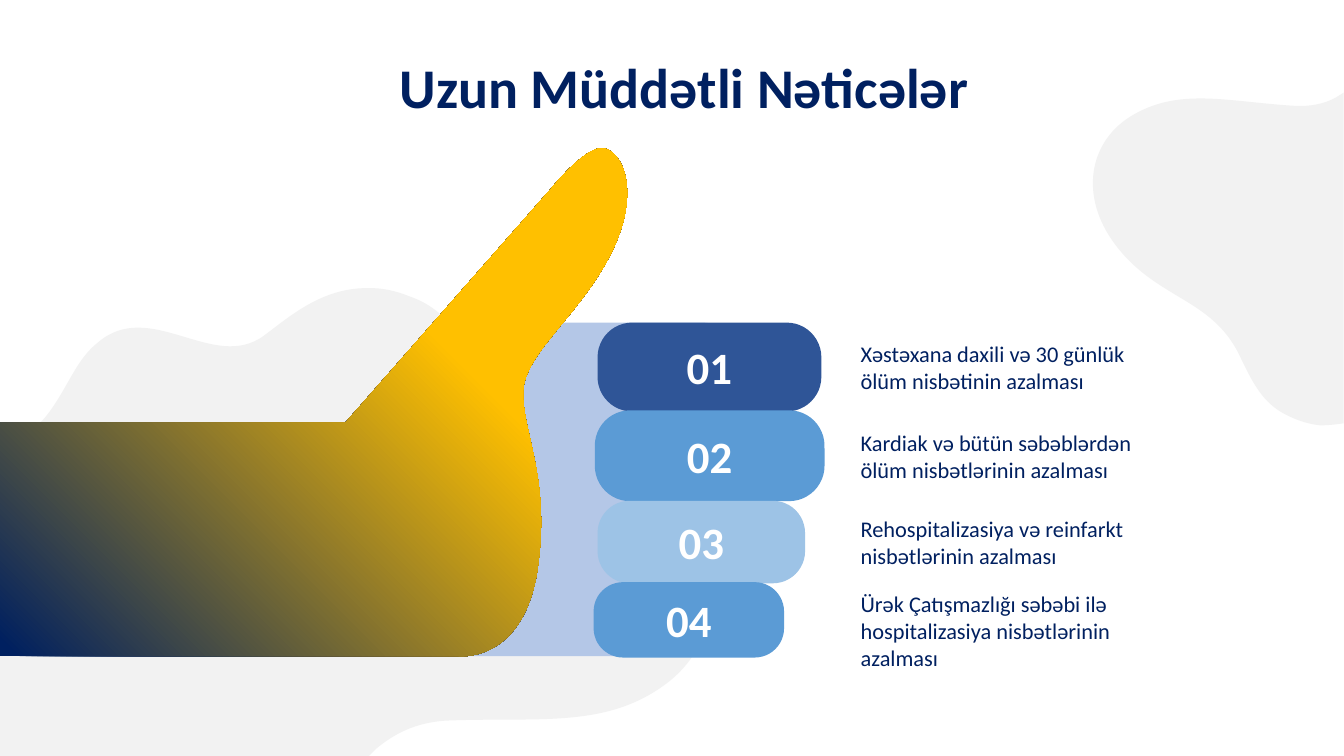
from lxml.etree import SubElement
from pptx import Presentation
from pptx.dml.color import RGBColor
from pptx.enum.shapes import MSO_SHAPE
from pptx.enum.text import MSO_ANCHOR, MSO_AUTO_SIZE, PP_ALIGN
from pptx.oxml.ns import qn
from pptx.util import Cm, Pt

THEME = {
    "navy": "002060", "gold": "FFC000", "white": "FFFFFF", "mist": "F2F2F2",
    "palm": "B4C7E7", "deep": "2F5597", "blue": "5B9BD5", "sky": "9DC3E6",
    "title": {"name": "Calibri", "size": Pt(40), "bold": True},
    "number": {"name": "Calibri", "size": Pt(32), "bold": True},
    "label": {"name": "Calibri", "size": Pt(16), "bold": False},
}
UNIT = Cm(2.54) / 100


def write(shape, text, role, tint, align, inset):
    frame = shape.text_frame
    box = {"word_wrap": True, "vertical_anchor": MSO_ANCHOR.MIDDLE,
           "margin_left": inset, "margin_right": inset,
           "margin_top": 0, "margin_bottom": 0}
    for key, value in box.items():
        setattr(frame, key, value)
    para = frame.paragraphs[0]
    para.alignment = align
    run = para.add_run()
    run.text = text
    for key, value in THEME[role].items():
        setattr(run.font, key, value)
    run.font.color.rgb = RGBColor.from_string(THEME[tint])
    return para


def outline(shapes, box, parts):
    x, y, w, h = box
    pen = shapes.build_freeform(x, y, scale=UNIT)
    pen.add_line_segments([(x + w, y), (x + w, y + h), (x, y + h)])
    form = pen.convert_to_shape()
    track = next(form.element.iter(qn("a:path")))
    for child in list(track):
        track.remove(child)
    for spot, part in enumerate(parts):
        kind = "cubicBezTo" if len(part) == 6 else "lnTo" if spot else "moveTo"
        move = SubElement(track, qn(f"a:{kind}"))
        for px, py in zip(part[::2], part[1::2]):
            SubElement(move, qn("a:pt"), x=str(px - x), y=str(py - y))
    SubElement(track, qn("a:close"))
    return form


deck = Presentation()
deck.slide_width = Cm(33.87)
deck.slide_height = Cm(19.05)
slide = deck.slides.add_slide(deck.slide_layouts[5])
shapes = slide.shapes

title = shapes.title
for key, value in {"left": Cm(2.63), "top": Cm(0.82),
                   "width": Cm(29.21), "height": Cm(2.9)}.items():
    setattr(title, key, value)
para = write(title, "Uzun Müddətli Nəticələr", "title", "navy",
             PP_ALIGN.CENTER, Cm(0.25))
para.line_spacing = 0.9

forms = [
    ("mist", (0, 286, 705, 464), [
        (359, 286),
        (316, 288, 285, 316, 262, 333), (212, 370, 149, 295, 97, 340),
        (78, 355, 70, 377, 55, 400), (39, 425, 24, 435, 7, 436),
        (0, 436), (0, 750), (366, 750), (373, 743),
        (391, 728, 412, 717, 442, 715), (534, 711, 603, 724, 664, 676),
        (716, 634, 721, 561, 666, 502), (601, 432, 527, 443, 481, 370),
        (459, 336, 442, 306, 406, 294), (389, 287, 373, 285, 359, 286)]),
    ("palm", (411, 320, 332, 331), [
        (411, 555), (411, 608, 431, 651, 455, 651), (698, 651),
        (723, 651, 743, 608, 743, 555), (743, 416),
        (743, 363, 723, 320, 698, 320), (455, 320),
        (431, 320, 411, 363, 411, 416)]),
    ("hand", (0, 147, 638, 513), [
        (0, 419), (343, 419), (547, 187),
        (547, 187, 579, 147, 597, 147), (615, 147, 638, 186, 607, 250),
        (575, 314, 520, 350, 519, 389), (518, 429, 547, 475, 533, 567),
        (518, 659, 454, 651, 454, 651), (0, 651)]),
    ("mist", (1084, 92, 249, 330), [
        (1333, 92), (1325, 97), (1314, 103, 1300, 106, 1284, 105),
        (1217, 101, 1169, 86, 1121, 116), (1080, 142, 1071, 195, 1106, 242),
        (1147, 297, 1201, 295, 1229, 351), (1242, 378, 1252, 400, 1277, 412),
        (1289, 418, 1300, 421, 1310, 422), (1318, 422, 1326, 421, 1333, 420)]),
]
for tint, box, parts in forms:
    form = outline(shapes, box, parts)
    form.shadow.inherit = False
    form.line.fill.background()
    if tint == "hand":
        form.fill.gradient()
        form.fill.gradient_angle = 45
        stops = zip(form.fill.gradient_stops, (("navy", 0.02), ("gold", 0.66)))
        for stop, (tone, place) in stops:
            stop.color.rgb = RGBColor.from_string(THEME[tone])
            stop.position = place
    else:
        form.fill.solid()
        form.fill.fore_color.rgb = RGBColor.from_string(THEME[tint])

rows = [
    ("deep", (15.06, 8.13, 5.64, 2.24), (8.56, 1.37),
     "Xəstəxana daxili və 30 günlük ölüm nisbətinin azalması"),
    ("blue", (14.99, 10.34, 5.79, 2.29), (10.8, 1.37),
     "Kardiak və bütün səbəblərdən ölüm nisbətlərinin azalması"),
    ("sky", (15.06, 12.62, 5.23, 2.08), (12.98, 1.37),
     "Rehospitalizasiya və reinfarkt nisbətlərinin azalması"),
    ("blue", (14.96, 14.67, 4.8, 1.9), (14.86, 2.06),
     "Ürək Çatışmazlığı səbəbi ilə hospitalizasiya nisbətlərinin azalması"),
]
for count, (tint, place, (top, height), text) in enumerate(rows, 1):
    pill = shapes.add_shape(MSO_SHAPE.ROUNDED_RECTANGLE, *map(Cm, place))
    pill.adjustments[0] = 0.39
    pill.shadow.inherit = False
    pill.line.fill.background()
    pill.fill.solid()
    pill.fill.fore_color.rgb = RGBColor.from_string(THEME[tint])
    write(pill, f"{count:02}", "number", "white", PP_ALIGN.CENTER, Cm(0.5))
    label = shapes.add_textbox(Cm(21.69), Cm(top), Cm(7.29), Cm(height))
    write(label, text, "label", "navy", PP_ALIGN.LEFT, 0)
    label.text_frame.auto_size = MSO_AUTO_SIZE.SHAPE_TO_FIT_TEXT

deck.save("out.pptx")
